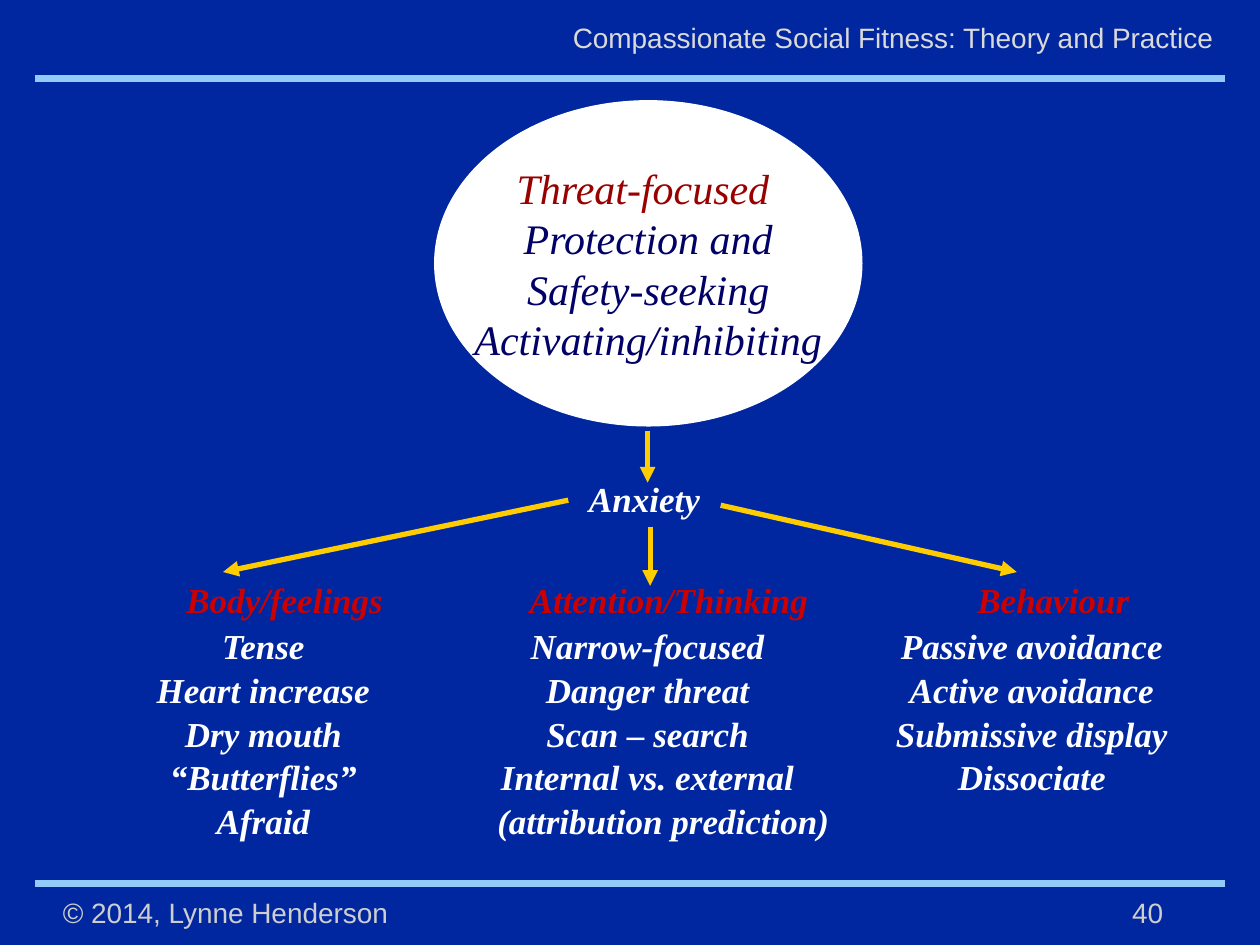
from lxml.etree import SubElement
from pptx import Presentation
from pptx.dml.color import RGBColor
from pptx.enum.shapes import MSO_CONNECTOR as Link, MSO_SHAPE as Preset
from pptx.enum.text import MSO_ANCHOR as Anchor, MSO_AUTO_SIZE as Fit, PP_ALIGN as Align
from pptx.oxml.ns import qn
from pptx.util import Inches, Pt

COLORS = {
    "ground": "00279F", "rule": "92CAFA", "footer": "CECECE", "header": "DADADA",
    "white": "FFFFFF", "threat": "990000", "navy": "000066", "heading": "CC0000",
    "arrow": "FFCC00",
}
COLS, ROWS = 100, 75


class SlideBuilder:
    sans, serif = "Arial", "Times New Roman"

    def __init__(self, deck):
        self.col = deck.slide_width / COLS
        self.row = deck.slide_height / ROWS
        self.slide = deck.slides.add_slide(deck.slide_layouts[4])
        self.spots = {spot.placeholder_format.idx: spot for spot in self.slide.placeholders}
        ground = self.slide.background.fill
        ground.solid()
        ground.fore_color.rgb = self.color("ground")

    def color(self, name):
        return RGBColor.from_string(COLORS[name])

    def place(self, left, top, width, height):
        return (round(left * self.col), round(top * self.row),
                round(width * self.col), round(height * self.row))

    def prepare(self, frame, anchor=Anchor.TOP, wrap=True):
        frame.word_wrap = wrap
        frame.auto_size = Fit.NONE
        frame.vertical_anchor = anchor
        frame.margin_left = frame.margin_right = Inches(0.1)
        frame.margin_top = frame.margin_bottom = Inches(0.05)

    def add_text(self, paragraph, text, color, size, font=serif, bold=False, italic=True,
                 align=Align.CENTER, before=0, spacing=1.0, margin=0):
        paragraph.alignment = align
        paragraph.space_before = Pt(before)
        paragraph.line_spacing = spacing
        props = paragraph._p.get_or_add_pPr()
        props.set("marL", str(Inches(margin)))
        props.set("indent", "0")
        SubElement(props, qn("a:buNone"))
        run = paragraph.add_run()
        run.text = text
        run.font.name, run.font.size = font, Pt(size)
        run.font.bold, run.font.italic = bold, italic
        run.font.color.rgb = self.color(color)

    def fill_placeholder(self, idx, area):
        spot = self.spots.pop(idx)
        spot.left, spot.top, spot.width, spot.height = self.place(*area)
        self.prepare(spot.text_frame)
        return spot.text_frame

    def header(self, text, area):
        frame = self.fill_placeholder(0, area)
        self.add_text(frame.paragraphs[0], text, "header", 16, self.sans,
                      italic=False, align=Align.RIGHT)

    def label(self, text, area, color, size, **style):
        frame = self.slide.shapes.add_textbox(*self.place(*area)).text_frame
        self.prepare(frame)
        self.add_text(frame.paragraphs[0], text, color, size, **style)

    def ellipse(self, area, lines):
        oval = self.slide.shapes.add_shape(Preset.OVAL, *self.place(*area))
        oval.shadow.inherit = False
        oval.fill.solid()
        oval.fill.fore_color.rgb = oval.line.color.rgb = self.color("white")
        oval.line.width = Pt(0.75)
        frame = oval.text_frame
        self.prepare(frame, Anchor.MIDDLE, wrap=False)
        for number, (text, color) in enumerate(lines):
            paragraph = frame.add_paragraph() if number else frame.paragraphs[0]
            self.add_text(paragraph, text, color, 24)

    def response(self, idx, area, heading, items):
        frame = self.fill_placeholder(idx, area)
        self.add_text(frame.paragraphs[0], heading, "heading", 20, bold=True, margin=0.34)
        for item in items:
            margin = 0.25 if item.startswith("(") else 0
            self.add_text(frame.add_paragraph(), item, "white", 20, bold=True,
                          before=10.7, spacing=0.6, margin=margin)

    def line(self, start, end, color, width, arrow=False):
        points = self.place(*start, *end)
        link = self.slide.shapes.add_connector(Link.STRAIGHT, *points)
        link.line.color.rgb = self.color(color)
        link.line.width = Pt(width)
        props = link._element.spPr
        if arrow:
            SubElement(props.find(qn("a:ln")), qn("a:tailEnd"), type="triangle")
        SubElement(props, qn("a:effectLst"))

    def drop_unused(self):
        for spot in self.spots.values():
            spot._element.getparent().remove(spot._element)


def main():
    deck = Presentation()
    deck.slide_width, deck.slide_height = Inches(10), Inches(7.5)
    page = SlideBuilder(deck)

    for height in (6.2, 70.1):
        page.line((2.8, height), (97.2, height), "rule", 4)
    page.header("Compassionate Social Fitness: Theory and Practice", (42.4, 1.1, 54.9, 3.7))
    footer = {"font": page.sans, "italic": False}
    page.label("© 2014, Lynne Henderson", (4, 70.6, 31, 3.7), "footer", 16,
               align=Align.LEFT, **footer)
    page.label("40", (84.3, 70.6, 9, 3.7), "footer", 16, align=Align.RIGHT, **footer)

    page.ellipse((34.5, 8, 33.9, 25.8), [
        ("Threat-focused ", "threat"), ("Protection and", "navy"),
        ("Safety-seeking", "navy"), ("Activating/inhibiting", "navy"),
    ])
    page.label("Anxiety", (41.3, 37.4, 19.7, 4.4), "white", 20, bold=True)

    responses = [
        (7.5, 26.8, "Body/feelings",
         ["Tense", "Heart increase", "Dry mouth", "“Butterflies”", "Afraid"]),
        (32.1, 38.6, "Attention/Thinking",
         ["Narrow-focused", "Danger threat", "Scan – search",
          "Internal vs. external", "(attribution prediction)"]),
        (68.1, 27.6, "Behaviour",
         ["Passive avoidance", "Active avoidance", "Submissive display", "Dissociate"]),
    ]
    for idx, (left, width, heading, items) in enumerate(responses, start=1):
        page.response(idx, (left, 45.4, width, 24), heading, items)

    arrows = [
        ((51.4, 34.2), (51.4, 38.3)),
        ((45.1, 39.7), (17.7, 45.4)),
        ((51.6, 41.8), (51.6, 46.5)),
        ((57.2, 40.1), (80.7, 45.4)),
    ]
    for start, end in arrows:
        page.line(start, end, "arrow", 3, arrow=True)

    page.drop_unused()
    deck.save("out.pptx")


if __name__ == "__main__":
    main()
